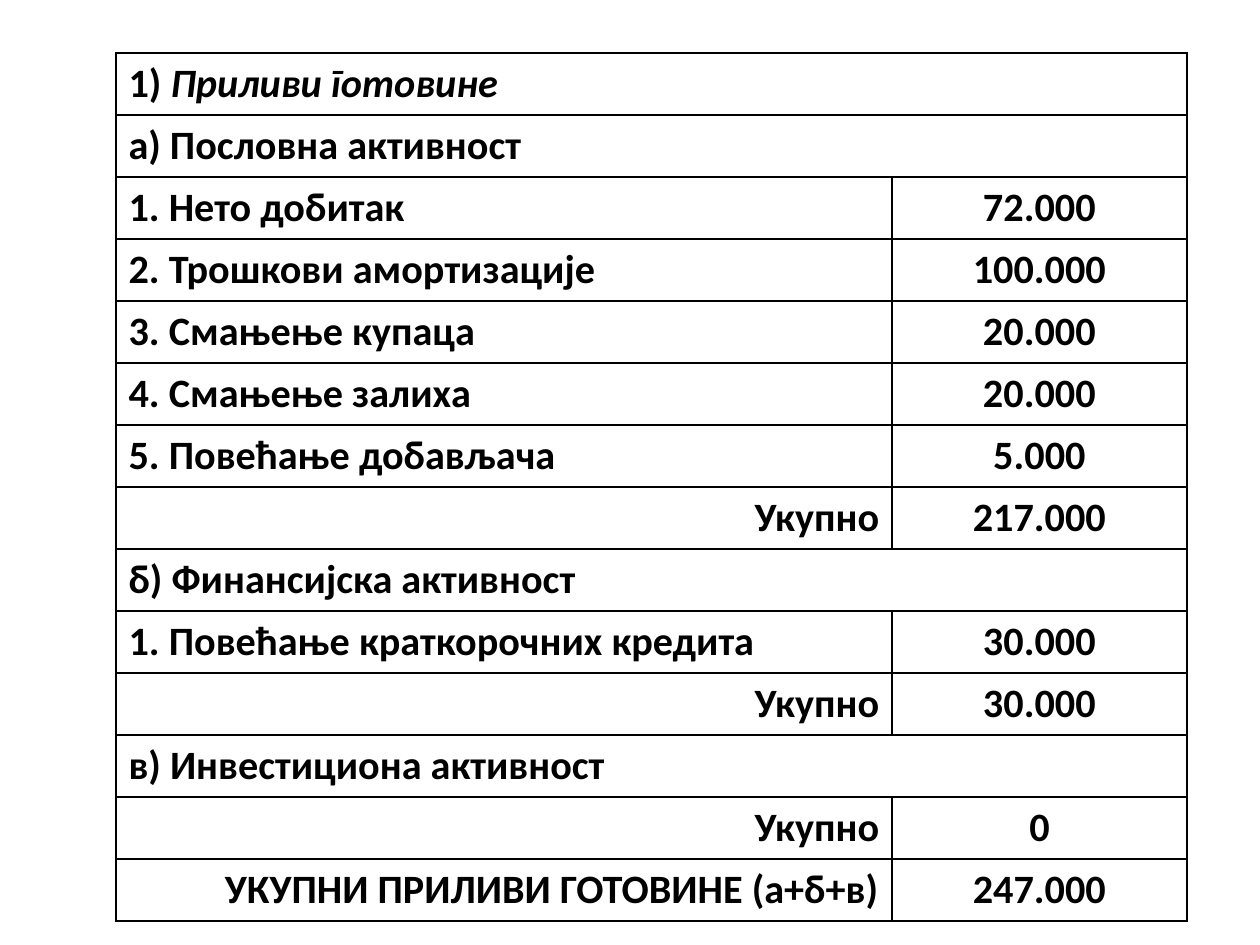
from dataclasses import dataclass
from lxml import etree
from pptx import Presentation
from pptx.dml.color import RGBColor
from pptx.enum.text import MSO_ANCHOR, PP_ALIGN
from pptx.oxml.ns import qn
from pptx.table import Table, _Cell
from pptx.util import Inches, Pt

LEFT, MID, RIGHT = PP_ALIGN.LEFT, PP_ALIGN.CENTER, PP_ALIGN.RIGHT
CENTER = MSO_ANCHOR.MIDDLE
SIDES = ("a:lnL", "a:lnR", "a:lnT", "a:lnB")


@dataclass(frozen=True)
class Theme:
    ink: str = "000000"
    font: str = "Calibri"
    size: float = 23
    line: float = 1
    lang: str = "sr-Cyrl-RS"


@dataclass(frozen=True)
class Entry:
    label: str
    sum: str = ""
    align: PP_ALIGN = LEFT
    lead: str = ""


THEME = Theme()
WIDTHS = (6.16, 2.34)
HEIGHT = 0.45
ROWS = [
    Entry("Приливи готовине", lead="1) "),
    Entry("а) Пословна активност"),
    Entry("1. Нето добитак", "72.000"),
    Entry("2. Трошкови амортизације", "100.000"),
    Entry("3. Смањење купаца", "20.000"),
    Entry("4. Смањење залиха", "20.000"),
    Entry("5. Повећање добављача", "5.000"),
    Entry("Укупно", "217.000", RIGHT),
    Entry("б) Финансијска активност"),
    Entry("1. Повећање краткорочних кредита", "30.000"),
    Entry("Укупно", "30.000", RIGHT),
    Entry("в) Инвестициона активност"),
    Entry("Укупно", "0", RIGHT),
    Entry("УКУПНИ ПРИЛИВИ ГОТОВИНЕ (а+б+в)", "247.000", RIGHT),
]


def frame_cell(cell: _Cell) -> None:
    props = cell._tc.get_or_add_tcPr()
    for side in SIDES:
        line = etree.SubElement(props, qn(side), w=str(Pt(THEME.line)))
        fill = etree.SubElement(line, qn("a:solidFill"))
        etree.SubElement(fill, qn("a:srgbClr"), val=THEME.ink)
    cell.fill.background()
    cell.vertical_anchor = CENTER


def write_cell(cell: _Cell, text: str, align: PP_ALIGN, lead: str = "") -> None:
    para = cell.text_frame.paragraphs[0]
    para.alignment = align
    for part, slant in ((lead, False), (text, bool(lead))):
        if not part:
            continue
        run = para.add_run()
        run.text = part
        style = {"name": THEME.font, "size": Pt(THEME.size), "bold": True, "italic": slant}
        for key, value in style.items():
            setattr(run.font, key, value)
        run.font.color.rgb = RGBColor.from_string(THEME.ink)
        run._r.get_or_add_rPr().set("lang", THEME.lang)


def draw_row(table: Table, index: int, entry: Entry) -> None:
    table.rows[index].height = Inches(HEIGHT)
    label, total = table.cell(index, 0), table.cell(index, 1)
    for cell in (label, total):
        frame_cell(cell)
    write_cell(label, entry.label, entry.align, entry.lead)
    if entry.sum:
        write_cell(total, entry.sum, MID)
    else:
        label.merge(total)


def main() -> None:
    deck = Presentation()
    deck.slide_width, deck.slide_height = Inches(10), Inches(7.5)
    slide = deck.slides.add_slide(deck.slide_layouts[6])
    table = slide.shapes.add_table(
        len(ROWS), len(WIDTHS), Inches(0.92), Inches(0.42),
        Inches(sum(WIDTHS)), Inches(HEIGHT * len(ROWS)),
    ).table
    table.first_row = table.horz_banding = False
    for column, width in zip(table.columns, WIDTHS):
        column.width = Inches(width)
    for index, entry in enumerate(ROWS):
        draw_row(table, index, entry)
    deck.save("out.pptx")


if __name__ == "__main__":
    main()
